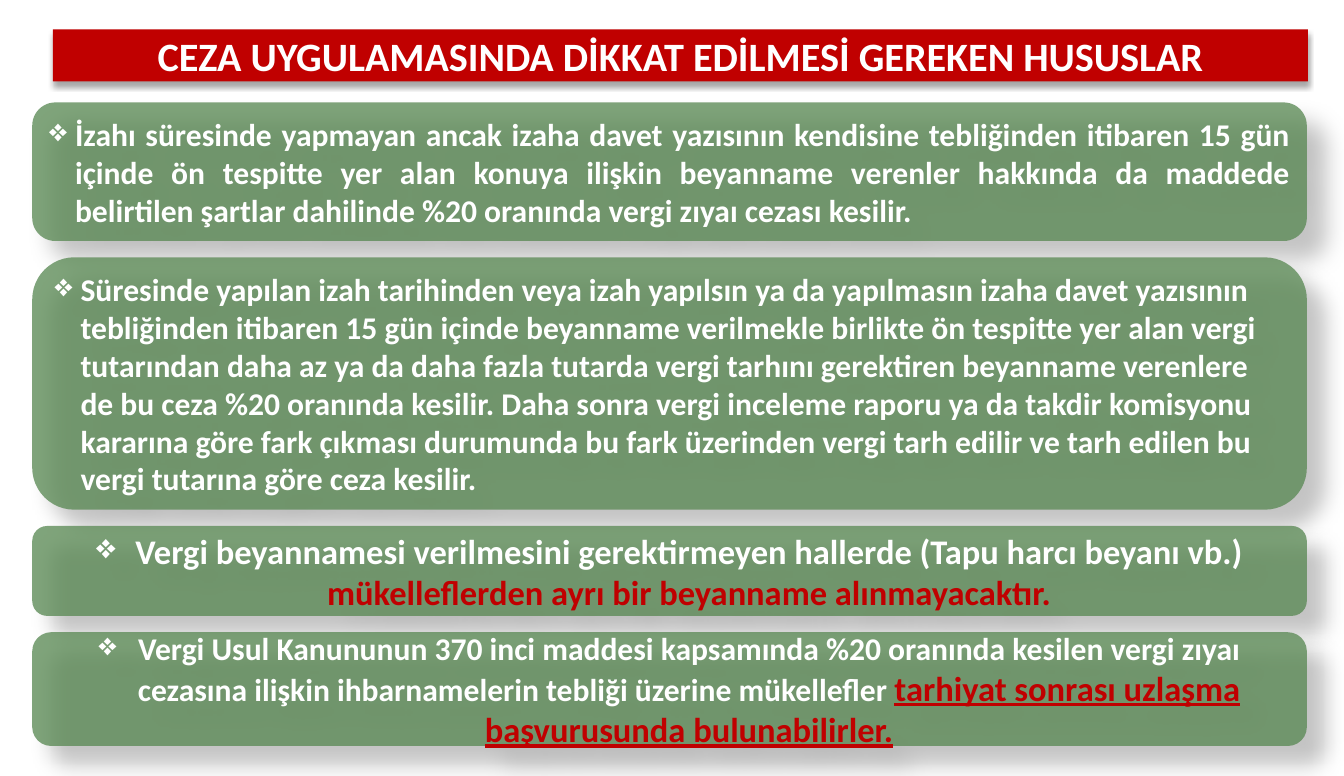
from lxml.etree import SubElement
from pptx import Presentation
from pptx.dml.color import RGBColor
from pptx.enum.shapes import MSO_SHAPE
from pptx.enum.text import MSO_ANCHOR, MSO_AUTO_SIZE, PP_ALIGN
from pptx.oxml.ns import qn
from pptx.util import Inches, Pt

RED, GREEN, WHITE, BLACK = "C00000", "588852", "FFFFFF", "000000"

deck = Presentation()
deck.slide_width, deck.slide_height = Inches(12.99), Inches(7.5)
# The slide is a grid of 100 columns by 100 rows
COLUMN, ROW = deck.slide_width / 100, deck.slide_height / 100


def color(hex_text):
    return RGBColor.from_string(hex_text)


def place(shape, box):
    left, top, width, height = box
    shape.left, shape.width = int(left * COLUMN), int(width * COLUMN)
    shape.top, shape.height = int(top * ROW), int(height * ROW)


def set_alpha(color_element, percent):
    SubElement(color_element, qn("a:alpha"), val=str(percent * 1000))


def paint(shape, fill, opacity, shadow):
    """Fill without outline; shadow is opacity, blur, distance and angle."""
    shape.fill.solid()
    shape.fill.fore_color.rgb = color(fill)
    if opacity < 100:
        set_alpha(shape.element.spPr.find(qn("a:solidFill"))[0], opacity)
    shape.line.fill.background()
    shape.shadow.inherit = False
    shade, blur, distance, angle = shadow
    outer = SubElement(
        shape.element.spPr.find(qn("a:effectLst")), qn("a:outerShdw"),
        blurRad=str(Pt(blur)), dist=str(Pt(distance)),
        dir=str(angle * 60000), algn="ctr", rotWithShape="0")
    set_alpha(SubElement(outer, qn("a:srgbClr"), val=BLACK), shade)


def write(shape, runs, align, indent=0):
    frame = shape.text_frame
    frame.word_wrap = True
    frame.auto_size = MSO_AUTO_SIZE.NONE
    frame.vertical_anchor = MSO_ANCHOR.MIDDLE
    paragraph = frame.paragraphs[0]
    paragraph.alignment = align
    if indent:
        properties = paragraph._p.get_or_add_pPr()
        properties.set("marL", str(Inches(indent)))
        properties.set("indent", str(-Inches(indent)))
        SubElement(properties, qn("a:buChar"), char="❖")
    for text, size, ink, underline in runs:
        run = paragraph.add_run()
        run.text = text
        font = run.font
        font.name, font.size, font.bold = "Calibri", Pt(size), True
        font.color.rgb = color(ink)
        if underline:
            font.underline = True


def add_heading(slide, box):
    heading = slide.shapes.title
    place(heading, box)
    paint(heading, RED, 100, (35, 4, 3, 90))
    write(heading, [("CEZA UYGULAMASINDA DİKKAT EDİLMESİ GEREKEN HUSUSLAR",
                     28, WHITE, False)], PP_ALIGN.CENTER)


def add_rules(slide, box, rules, gap):
    """Stack the rule panels; their heights share what the gaps leave."""
    left, top, width, height = box
    free = height - gap * (len(rules) - 1)
    total = sum(rule[0] for rule in rules)
    for share, align, indent, runs in rules:
        panel_height = free * share / total
        panel = slide.shapes.add_shape(MSO_SHAPE.ROUNDED_RECTANGLE, 0, 0, 0, 0)
        place(panel, (left, top, width, panel_height))
        paint(panel, GREEN, 76, (30, 15, 18, 45))
        write(panel, runs, align, indent)
        top += panel_height + gap


# Height share, alignment, indent, runs (text, size, colour, underline)
RULES = [
    (134, PP_ALIGN.JUSTIFY, 0.25, [
        ("İzahı süresinde yapmayan ancak izaha davet yazısının kendisine "
         "tebliğinden itibaren 15 gün içinde ön tespitte yer alan konuya "
         "ilişkin beyanname verenler hakkında da maddede belirtilen şartlar "
         "dahilinde %20 oranında vergi zıyaı cezası kesilir.",
         22, WHITE, False)]),
    (244, PP_ALIGN.LEFT, 0.25, [
        ("Süresinde yapılan izah tarihinden veya izah yapılsın ya da "
         "yapılmasın izaha davet yazısının tebliğinden itibaren 15 gün içinde "
         "beyanname verilmekle birlikte ön tespitte yer alan vergi tutarından "
         "daha az ya da daha fazla tutarda vergi tarhını gerektiren beyanname "
         "verenlere de bu ceza %20 oranında kesilir. Daha sonra vergi inceleme "
         "raporu ya da takdir komisyonu kararına göre fark çıkması durumunda "
         "bu fark üzerinden vergi tarh edilir ve tarh edilen bu vergi tutarına "
         "göre ceza kesilir.", 22, WHITE, False)]),
    (87, PP_ALIGN.CENTER, 0.38, [
        ("Vergi beyannamesi verilmesini gerektirmeyen hallerde (Tapu harcı "
         "beyanı vb.) ", 24, WHITE, False),
        ("mükelleflerden ayrı bir beyanname alınmayacaktır.",
         24, RED, False)]),
    (110, PP_ALIGN.CENTER, 0.38, [
        ("Vergi Usul Kanununun 370 inci maddesi kapsamında %20 oranında "
         "kesilen vergi zıyaı cezasına ilişkin ihbarnamelerin tebliği üzerine "
         "mükellefler ", 22, WHITE, False),
        ("tarhiyat sonrası uzlaşma başvurusunda bulunabilirler.",
         24, RED, True)]),
]

slide = deck.slides.add_slide(deck.slide_layouts[5])
add_heading(slide, (3.93, 3.8, 93.38, 6.7))
add_rules(slide, (2.4, 13.2, 94.84, 82.93), RULES, gap=2.1)
deck.save("out.pptx")
